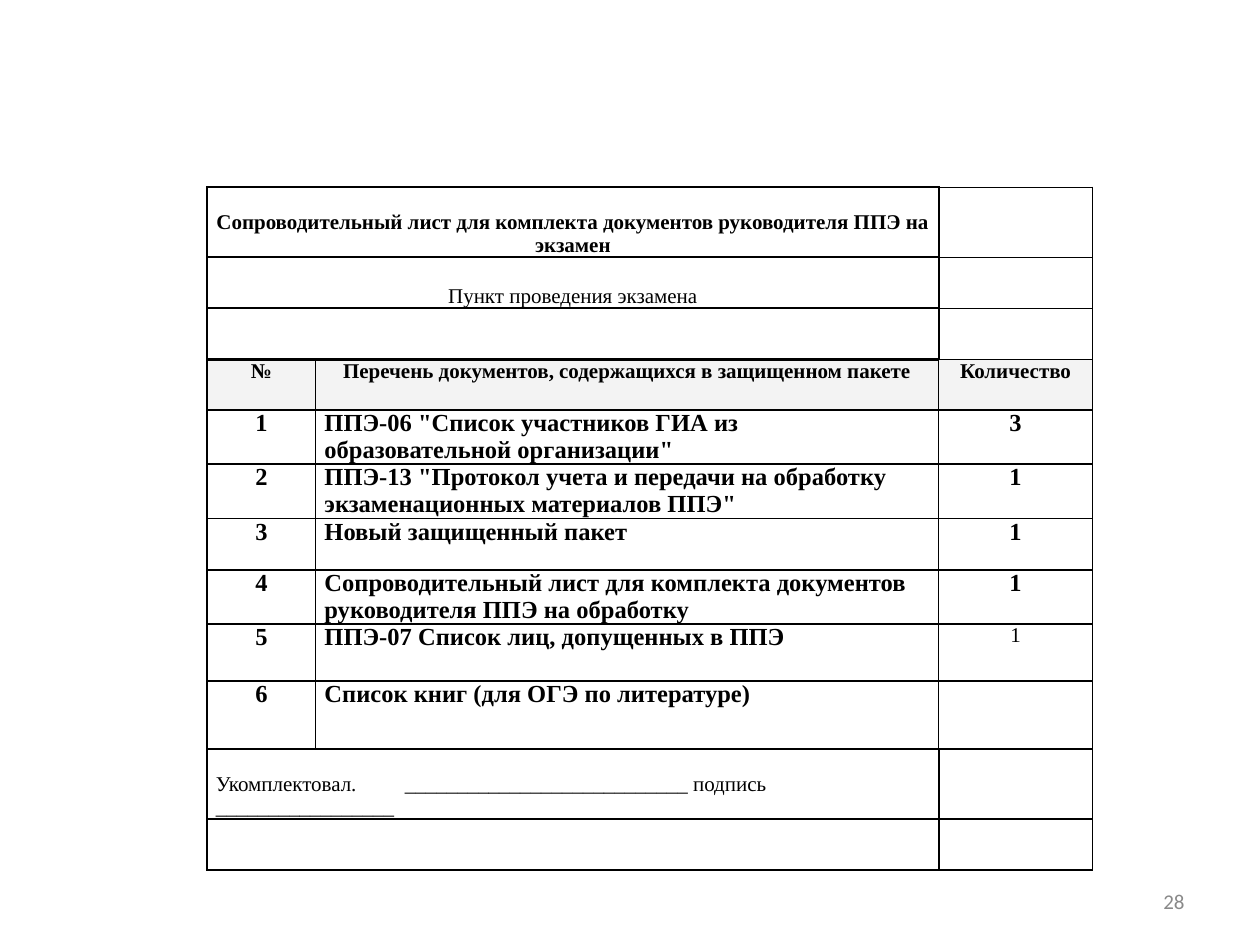
from dataclasses import dataclass

from lxml import etree
from pptx import Presentation
from pptx.dml.color import RGBColor
from pptx.enum import text
from pptx.oxml import ns
from pptx.util import Pt


@dataclass(frozen=True)
class Theme:
    ink: str = "000000"
    muted: str = "898989"
    header_fill: str = "F3F3F3"
    form_font: str = "Times New Roman"
    number_font: str = "Calibri"
    small: int = 12
    large: int = 14
    thin: float = 1
    thick: float = 1.5


THEME = Theme()
CENTER, LEFT, RIGHT = text.PP_ALIGN.CENTER, text.PP_ALIGN.LEFT, text.PP_ALIGN.RIGHT
TOP, MIDDLE, BOTTOM = (text.MSO_ANCHOR.TOP, text.MSO_ANCHOR.MIDDLE,
                       text.MSO_ANCHOR.BOTTOM)

COLUMN_WIDTHS = (62, 356, 88)
ROW_HEIGHTS = (40, 29, 29, 28.8, 31, 31, 29.5, 31, 32.5, 39, 40, 29)

HEADINGS = ("№", "Перечень документов, содержащихся в защищенном пакете", "Количество")
DOCUMENTS = (
    ('ППЭ-06 "Список участников ГИА из образовательной организации"', "3"),
    ('ППЭ-13 "Протокол учета и передачи на обработку экзаменационных материалов ППЭ"', "1"),
    ("Новый защищенный пакет", "1"),
    ("Сопроводительный лист для комплекта документов руководителя ППЭ на обработку", "1"),
    ("ППЭ-07 Список лиц, допущенных в ППЭ", "1"),
    ("Список книг (для ОГЭ по литературе)", ""),
)
# Full-width rows: row index -> text, alignment, bold
WIDE_ROWS = {
    0: ("Сопроводительный лист для комплекта документов руководителя ППЭ на экзамен",
        CENTER, True),
    1: ("Пункт проведения экзамена", CENTER, False),
    2: ("", CENTER, False),
    10: ("Укомплектовал. \t___________________________ подпись _________________",
         LEFT, False),
    11: ("", LEFT, False),
}
HEADING_ROW = 3


def style_paragraph(paragraph, align, size, font, color, bold=False):
    paragraph.alignment = align
    for run in paragraph.runs:
        run.font.size = Pt(size)
        run.font.name = font
        run.font.bold = bold
        run.font.color.rgb = RGBColor.from_string(color)


def write_cell(cell, words, align, size, bold, anchor=TOP):
    if not words:
        return
    cell.margin_left = cell.margin_right = Pt(5)
    cell.margin_top = cell.margin_bottom = 0
    cell.vertical_anchor = anchor
    cell.text_frame.text = words
    style_paragraph(cell.text_frame.paragraphs[0], align, size,
                    THEME.form_font, THEME.ink, bold)


def set_borders(cell, width):
    properties = cell._tc.get_or_add_tcPr()
    for side in ("lnL", "lnR", "lnT", "lnB"):
        line = etree.SubElement(properties, ns.qn(f"a:{side}"), w=str(Pt(width)))
        fill = etree.SubElement(line, ns.qn("a:solidFill"))
        etree.SubElement(fill, ns.qn("a:srgbClr"), val=THEME.ink)


def add_form(slide):
    frame = slide.shapes.add_table(
        len(ROW_HEIGHTS), len(COLUMN_WIDTHS), Pt(118.4), Pt(107),
        Pt(sum(COLUMN_WIDTHS)), Pt(sum(ROW_HEIGHTS)))
    form = frame.table
    form.first_row = form.horz_banding = False
    for column, width in zip(form.columns, COLUMN_WIDTHS):
        column.width = Pt(width)
    for row, height in zip(form.rows, ROW_HEIGHTS):
        row.height = Pt(height)

    # Grid lines come before fills in the cell properties
    for index, row in enumerate(form.rows):
        for column, cell in enumerate(row.cells):
            wide = index in WIDE_ROWS and column < 2
            set_borders(cell, THEME.thick if wide else THEME.thin)
            cell.fill.background()

    # Title, exam point and signature rows
    for index, (words, align, bold) in WIDE_ROWS.items():
        cell = form.cell(index, 0)
        cell.merge(form.cell(index, 1))
        write_cell(cell, words, align, THEME.small, bold, BOTTOM)

    # Column headings
    for column, heading in enumerate(HEADINGS):
        cell = form.cell(HEADING_ROW, column)
        cell.fill.solid()
        cell.fill.fore_color.rgb = RGBColor.from_string(THEME.header_fill)
        write_cell(cell, heading, CENTER, THEME.small, True)

    # Numbered documents; the quantity of the fifth is set small and light
    for number, (document, quantity) in enumerate(DOCUMENTS, start=1):
        row = HEADING_ROW + number
        light = number == 5
        write_cell(form.cell(row, 0), str(number), CENTER, THEME.large, True)
        write_cell(form.cell(row, 1), document, LEFT, THEME.large, True)
        write_cell(form.cell(row, 2), quantity, CENTER,
                   THEME.small if light else THEME.large, not light)


def add_page_number(slide, number):
    box = slide.shapes.add_textbox(Pt(516), Pt(500.5), Pt(168), Pt(28.8))
    box.text_frame.word_wrap = True
    box.text_frame.vertical_anchor = MIDDLE
    box.text_frame.text = number
    style_paragraph(box.text_frame.paragraphs[0], RIGHT, THEME.small,
                    THEME.number_font, THEME.muted)


def main():
    deck = Presentation()
    deck.slide_width, deck.slide_height = Pt(720), Pt(540)
    slide = deck.slides.add_slide(deck.slide_layouts[6])
    add_form(slide)
    add_page_number(slide, "28")
    deck.save("out.pptx")


if __name__ == "__main__":
    main()
